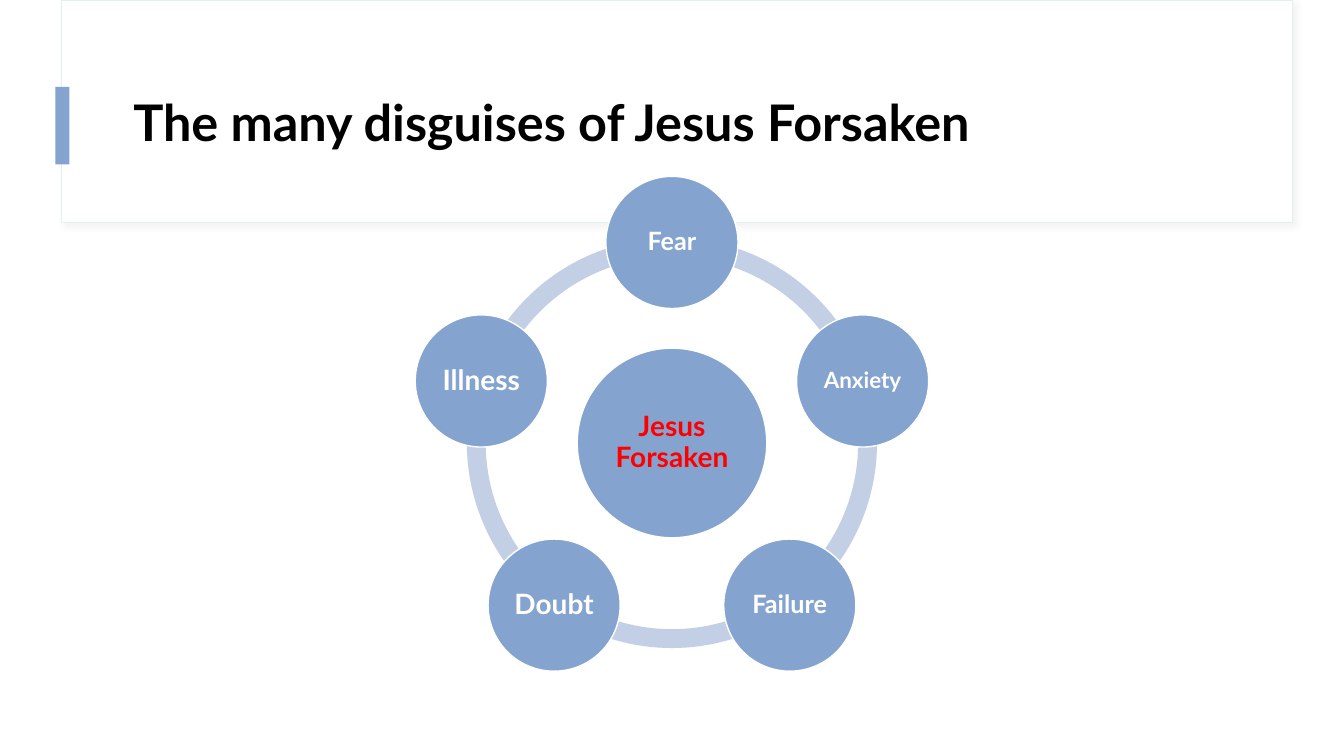
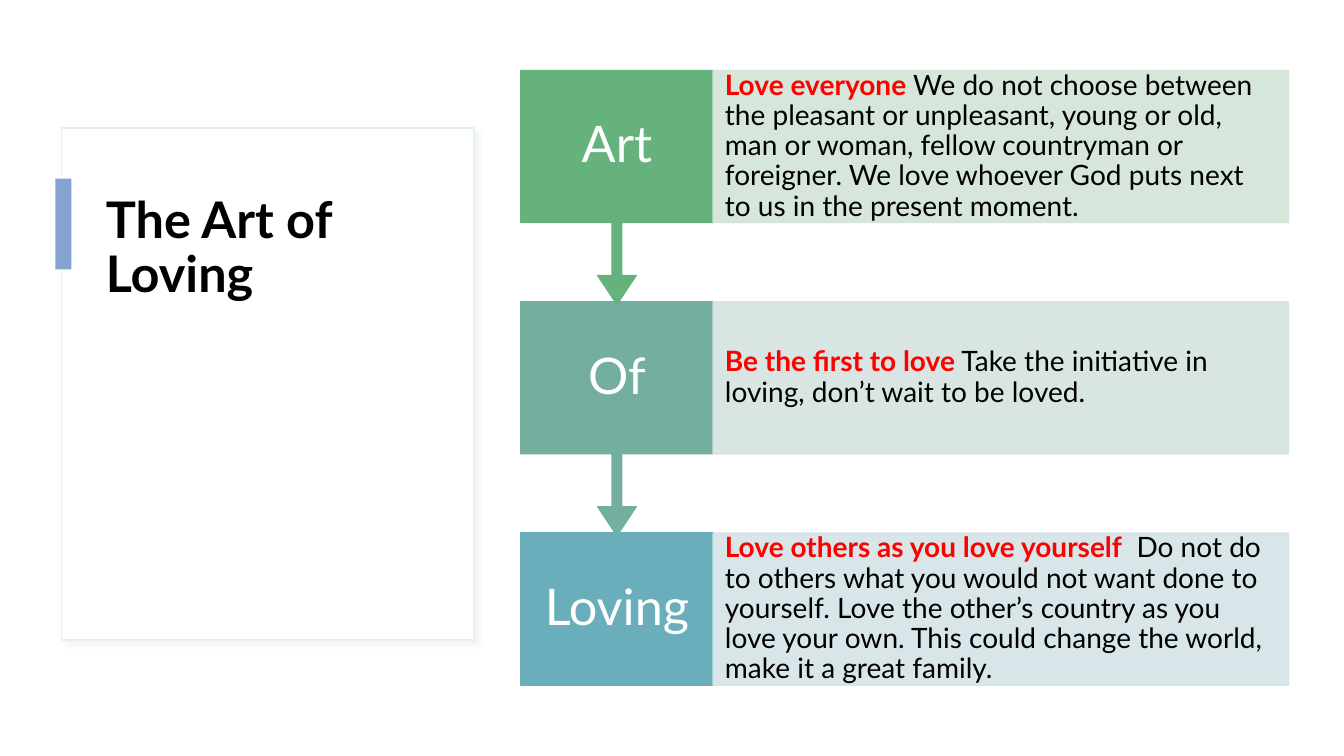
import math
import lxml.etree
import pptx
import pptx.dml.color
import pptx.enum.shapes
import pptx.enum.text
import pptx.oxml.ns
import pptx.util

Pt = pptx.util.Pt
rgb = pptx.dml.color.RGBColor.from_string
qn = pptx.oxml.ns.qn
kinds = pptx.enum.shapes.MSO_SHAPE
aligns = pptx.enum.text.PP_ALIGN
anchors = pptx.enum.text.MSO_ANCHOR

FONT = "Lato"
BLUE = "84A4CF"
PALE = "C2CFE4"
EDGE = "E4F0F0"
GRAY = "D9D9D9"
WHITE = "FFFFFF"
BLACK = "000000"
RED = "FF0000"


def draw(slide, kind, left, top, width, height, fill, line=None, weight=1, alpha=None):
    shape = slide.shapes.add_shape(kind, Pt(left), Pt(top), Pt(width), Pt(height))
    shape.shadow.inherit = False
    shape.fill.solid()
    shape.fill.fore_color.rgb = rgb(fill)
    if line:
        shape.line.color.rgb = rgb(line)
        shape.line.width = Pt(weight)
    else:
        shape.line.fill.background()
    if alpha:
        for node in list(shape.element.spPr.iter(qn("a:srgbClr"))):
            lxml.etree.SubElement(node, qn("a:alpha"), val=str(alpha * 1000))
    return shape


def write(shape, text, size=20, color=WHITE, bold=False, align=aligns.CENTER,
          anchor=anchors.MIDDLE, side=2, edge=0):
    frame = shape.text_frame
    frame.word_wrap = True
    frame.auto_size = pptx.enum.text.MSO_AUTO_SIZE.NONE
    frame.vertical_anchor = anchor
    frame.margin_left = frame.margin_right = Pt(side)
    frame.margin_top = frame.margin_bottom = Pt(edge)
    para = frame.paragraphs[0]
    para.alignment = align
    para.line_spacing = 0.9
    run = para.add_run()
    run.text = text
    run.font.name = FONT
    run.font.size = Pt(size)
    run.font.bold = bold
    run.font.color.rgb = rgb(color)


deck = pptx.Presentation()
deck.slide_width = Pt(960)
deck.slide_height = Pt(540)

heads = [
    ("The many disguises of Jesus Forsaken", anchors.MIDDLE, 0.75,
     (44, 0, 879, 159), (39.6, 62, 10, 55.4), (88, 43.2, 800.6, 93)),
    ("The Art of Loving", anchors.TOP, 1,
     (44, 91.4, 294.5, 365.8), (39.6, 127.6, 11.5, 64.8), (68.4, 135.4, 244, 277)),
]
for text, anchor, weight, panel, mark, place in heads:
    slide = deck.slides.add_slide(deck.slide_layouts[5])
    card = draw(slide, kinds.RECTANGLE, *panel, WHITE, EDGE, weight)
    glow = lxml.etree.SubElement(
        card.element.spPr.find(qn("a:effectLst")), qn("a:outerShdw"),
        blurRad=str(Pt(4)), dist=str(Pt(3)), dir="2700000", algn="tl", rotWithShape="0")
    tone = lxml.etree.SubElement(glow, qn("a:srgbClr"), val=GRAY)
    lxml.etree.SubElement(tone, qn("a:alpha"), val="30000")
    draw(slide, kinds.RECTANGLE, *mark, BLUE)
    title = slide.shapes.title
    title.left, title.top, title.width, title.height = map(Pt, place)
    write(title, text, size=36, color=BLACK, bold=True, align=aligns.LEFT,
          anchor=anchor, side=7.2, edge=3.6)
    title.element.getparent().append(title.element)

wheel, steps = deck.slides

mid_x, mid_y = 480, 316.4
ring, hub, ball, orbit = 293, 135.4, 94.4, 143.2
band = draw(wheel, kinds.DONUT, mid_x - ring / 2, mid_y - ring / 2, ring, ring, PALE)
band.adjustments[0] = 0.046
core = draw(wheel, kinds.OVAL, mid_x - hub / 2, mid_y - hub / 2, hub, hub, BLUE, WHITE)
write(core, "Jesus Forsaken", color=RED, bold=True)

names = [("Fear", 18), ("Anxiety", 16), ("Failure", 18), ("Doubt", 20), ("Illness", 20)]
for i, (name, size) in enumerate(names):
    turn = math.tau * i / len(names)
    left = mid_x + orbit * math.sin(turn) - ball / 2
    top = mid_y - orbit * math.cos(turn) - ball / 2
    disc = draw(wheel, kinds.OVAL, left, top, ball, ball, BLUE, WHITE)
    write(disc, name, size=size, bold=True)

rows = [
    ("Art", "65B27D", "D3E4D7", "Love everyone",
     " We do not choose between the pleasant or unpleasant, young or old, man or woman, "
     "fellow countryman or foreigner. We love whoever God puts next to us in the present moment."),
    ("Of", "73AE9E", "D5E3DF", "Be the first to love",
     " Take the initiative in loving, don’t wait to be loved."),
    ("Loving", "69AEBA", "D4E3E7", "Love others as you love yourself",
     "  Do not do to others what you would not want done to yourself. Love the other’s "
     "country as you love your own. This could change the world, make it a great family."),
]
left, wide, high, pitch, drop = 372, 137.4, 108.6, 165.2, 167
for i, (word, dark, light, lead, rest) in reversed(list(enumerate(rows))):
    top = 50.4 + i * pitch
    if i < len(rows) - 1:
        block = draw(steps, kinds.DOWN_ARROW_CALLOUT, left, top, wide, drop, dark, dark)
        for k, ratio in enumerate((0.05, 0.1, 0.15, 0.65)):
            block.adjustments[k] = ratio
    else:
        block = draw(steps, kinds.RECTANGLE, left, top, wide, high, dark, dark)
    write(block, word, size=36, side=10)
    note = draw(steps, kinds.RECTANGLE, left + wide, top, 411, high, light, light, alpha=90)
    write(note, lead, color=RED, bold=True, align=aligns.LEFT, side=8.4)
    write(note, rest, color=BLACK, align=aligns.LEFT, side=8.4)

deck.save("out.pptx")
